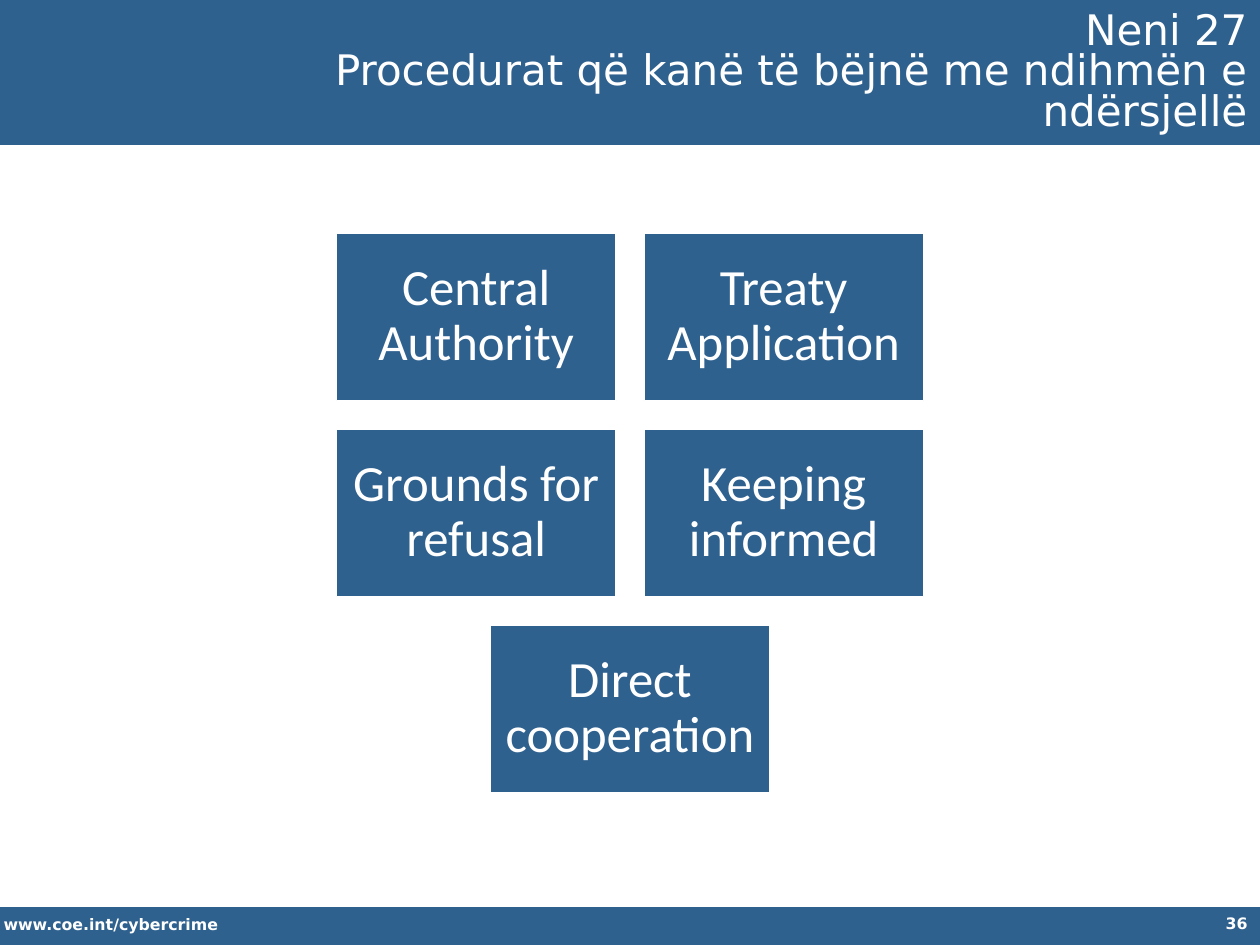
from pptx import Presentation
from pptx.dml.color import RGBColor
from pptx.enum.shapes import MSO_SHAPE
from pptx.enum.text import MSO_ANCHOR, PP_ALIGN
from pptx.util import Inches, Pt

BLUE = RGBColor(0x2F, 0x61, 0x8F)
WHITE = RGBColor(0xFF, 0xFF, 0xFF)

WIDE, HIGH = 2.22, 1.33      # topic box
STEP_X, STEP_Y = 2.44, 1.555  # box plus gap
TOP = 1.85
ROWS = [
    ["Central Authority", "Treaty Application"],
    ["Grounds for refusal", "Keeping informed"],
    ["Direct cooperation"],
]


def add_rect(slide, x, y, w, h):
    rect = slide.shapes.add_shape(
        MSO_SHAPE.RECTANGLE, Inches(x), Inches(y), Inches(w), Inches(h))
    rect.shadow.inherit = False
    rect.fill.solid()
    rect.fill.fore_color.rgb = BLUE
    rect.line.fill.background()
    return rect


def set_text(frame, lines, size, face, align, space=1.0, bold=False):
    frame.word_wrap = True
    for i, line in enumerate(lines):
        par = frame.paragraphs[0] if i == 0 else frame.add_paragraph()
        par.text = line
        par.alignment = align
        par.line_spacing = space
        par.font.size = Pt(size)
        par.font.name = face
        par.font.bold = bold
        par.font.color.rgb = WHITE


def add_label(slide, x, y, w, h, text, align):
    box = slide.shapes.add_textbox(Inches(x), Inches(y), Inches(w), Inches(h))
    set_text(box.text_frame, [text], 9, "DejaVu Sans", align, bold=True)


def add_topic(slide, x, y, text):
    rect = add_rect(slide, x, y, WIDE, HIGH)
    rect.line.color.rgb = WHITE
    rect.line.width = Pt(1)
    frame = rect.text_frame
    frame.margin_left = frame.margin_right = Inches(0.12)
    frame.margin_top = frame.margin_bottom = Inches(0.12)
    frame.vertical_anchor = MSO_ANCHOR.MIDDLE
    set_text(frame, [text], 29, "Calibri", PP_ALIGN.CENTER, 0.9)


def add_title(slide, lines):
    rect = add_rect(slide, 1.83, 0.08, 8.17, 1.01)
    rect.text_frame.vertical_anchor = MSO_ANCHOR.MIDDLE
    set_text(rect.text_frame, lines, 24, "DejaVu Sans", PP_ALIGN.RIGHT, 0.8)


def main():
    deck = Presentation()
    deck.slide_width, deck.slide_height = Inches(10), Inches(7.5)
    slide = deck.slides.add_slide(deck.slide_layouts[6])

    # Header and footer bands
    add_rect(slide, 0, -0.03, 10, 1.18)
    add_rect(slide, 0, 7.2, 10, 0.32)
    add_label(slide, -0.07, 7.21, 3.52, 0.25, "www.coe.int/cybercrime",
              PP_ALIGN.LEFT)
    add_label(slide, 7.67, 7.2, 2.33, 0.3, "36", PP_ALIGN.RIGHT)

    # Topic grid, each row centred on the slide
    for r, row in enumerate(ROWS):
        left = 5 - (WIDE + STEP_X * (len(row) - 1)) / 2
        for c, text in enumerate(row):
            add_topic(slide, left + c * STEP_X, TOP + r * STEP_Y, text)

    # Title
    add_title(slide, ["Neni 27",
                      "Procedurat që kanë të bëjnë me ndihmën e ndërsjellë"])

    deck.save("out.pptx")


if __name__ == "__main__":
    main()
